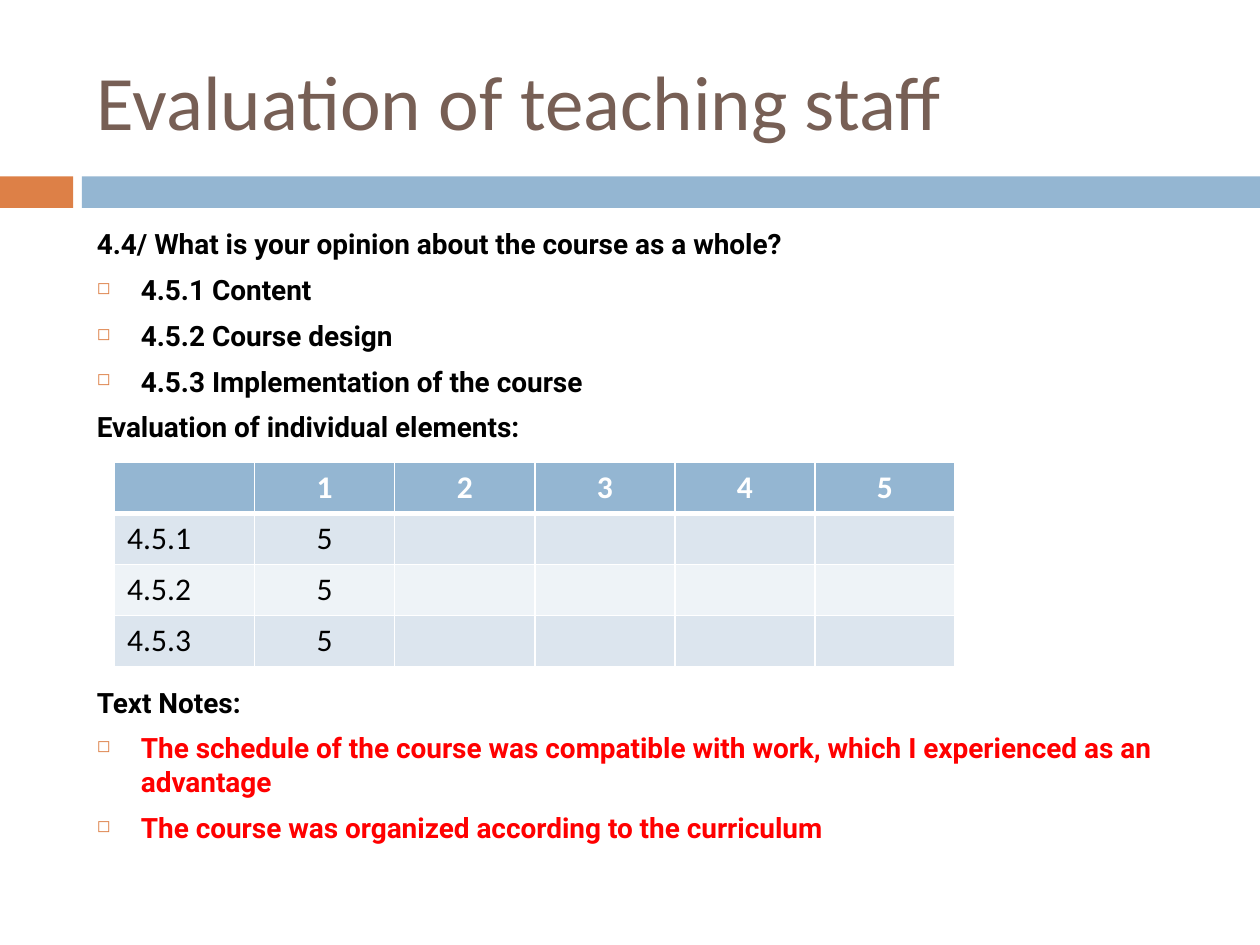
from lxml import etree
from pptx import Presentation
from pptx.dml.color import RGBColor
from pptx.enum.shapes import MSO_SHAPE
from pptx.enum.text import MSO_ANCHOR, PP_ALIGN
from pptx.oxml.ns import qn
from pptx.util import Inches, Pt

RECTANGLE = MSO_SHAPE.RECTANGLE
TOP, MIDDLE = MSO_ANCHOR.TOP, MSO_ANCHOR.MIDDLE
LEFT, CENTER = PP_ALIGN.LEFT, PP_ALIGN.CENTER

# Content
TITLE = "Evaluation of teaching staff"
# Each line: text, bulleted, colour name, space before in points
LINES = [
    ("4.4/ What is your opinion about the course as a whole?", False, "text", 0),
    ("4.5.1 Content", True, "text", 7),
    ("4.5.2 Course design", True, "text", 7),
    ("4.5.3 Implementation of the course", True, "text", 7),
    ("Evaluation of individual elements:", False, "text", 7),
    ("Text Notes:", False, "text", 138),  # leaves room for the ratings table
    ("The schedule of the course was compatible with work, "
     "which I experienced as an advantage", True, "note", 7),
    ("The course was organized according to the curriculum", True, "note", 7),
]
RATINGS = [
    ["", "1", "2", "3", "4", "5"],
    ["4.5.1", "5", "", "", "", ""],
    ["4.5.2", "5", "", "", "", ""],
    ["4.5.3", "5", "", "", "", ""],
]

THEME = {
    "title": "775F55", "text": "000000", "note": "FF0000", "white": "FFFFFF",
    "orange": "DD8047", "blue": "94B6D2", "bands": ["DCE5EE", "EEF3F7"],
    "heading_font": "Calibri", "body_font": "Roboto",
    "title_size": 44, "body_size": 16, "table_size": 18,
}

# Layout in inches: left, top, width, height
BARS = [("orange", 0, 1.4, 0.58, 0.25), ("blue", 0.65, 1.4, 9.35, 0.25)]
TITLE_AREA = (0.67, 0.25, 8.92, 1.08)
BODY_AREA = (0.67, 1.75, 9.13, 5.54)
TABLE_AREA = (0.91, 3.67, 6.67, 1.62)
INDENT = 0.35


def style(para, font, size, color, bold=False):
    for span in para.runs:
        span.font.name = font
        span.font.size = Pt(size)
        span.font.bold = bold
        span.font.color.rgb = RGBColor.from_string(color)


def add_box(page, area, anchor):
    frame = page.shapes.add_textbox(*map(Inches, area)).text_frame
    frame.word_wrap = True
    frame.vertical_anchor = anchor
    return frame


def add_bullet(properties):
    color = etree.SubElement(properties, qn("a:buClr"))
    etree.SubElement(color, qn("a:srgbClr"), val=THEME["orange"])
    etree.SubElement(properties, qn("a:buSzPct"), val="60000")
    etree.SubElement(properties, qn("a:buChar"), char="◻")


def set_borders(cell, bottom, top):
    properties = cell._tc.get_or_add_tcPr()
    widths = {"a:lnL": 1, "a:lnR": 1, "a:lnT": top, "a:lnB": bottom}
    for position, (side, width) in enumerate(widths.items()):
        line = etree.Element(qn(side), w=str(Pt(width)))
        fill = etree.SubElement(line, qn("a:solidFill"))
        etree.SubElement(fill, qn("a:srgbClr"), val=THEME["white"])
        properties.insert(position, line)


def add_bars(page):
    for color, *area in BARS:
        bar = page.shapes.add_shape(RECTANGLE, *map(Inches, area))
        bar.shadow.inherit = False
        bar.fill.solid()
        bar.fill.fore_color.rgb = RGBColor.from_string(THEME[color])
        bar.line.fill.background()


def add_title(page):
    para = add_box(page, TITLE_AREA, MIDDLE).paragraphs[0]
    para.text = TITLE
    style(para, THEME["heading_font"], THEME["title_size"], THEME["title"])


def add_body(page):
    frame = add_box(page, BODY_AREA, TOP)
    frame.text = "\n".join(line[0] for line in LINES)
    for para, (_, bulleted, color, gap) in zip(frame.paragraphs, LINES):
        para.space_before = Pt(gap)
        properties = para._p.get_or_add_pPr()
        properties.set("marL", str(Inches(INDENT)))
        properties.set("indent", str(-Inches(INDENT)))
        if bulleted:
            add_bullet(properties)
        style(para, THEME["body_font"], THEME["body_size"], THEME[color], True)


def add_ratings(page):
    left, top, width, height = map(Inches, TABLE_AREA)
    rows, columns = len(RATINGS), len(RATINGS[0])
    table = page.shapes.add_table(rows, columns, left, top, width, height).table
    for r, values in enumerate(RATINGS):
        header = r == 0
        fill = THEME["blue"] if header else THEME["bands"][(r - 1) % 2]
        color = THEME["white"] if header else THEME["text"]
        for c, value in enumerate(values):
            cell = table.cell(r, c)
            cell.text = value
            cell.fill.solid()
            cell.fill.fore_color.rgb = RGBColor.from_string(fill)
            set_borders(cell, bottom=3 if header else 1, top=3 if r == 1 else 1)
            para = cell.text_frame.paragraphs[0]
            para.alignment = LEFT if c == 0 else CENTER
            style(para, THEME["heading_font"], THEME["table_size"], color, header)


def main():
    deck = Presentation()
    deck.slide_width, deck.slide_height = Inches(10), Inches(7.5)
    page = deck.slides.add_slide(deck.slide_layouts[6])
    add_bars(page)
    add_title(page)
    add_body(page)
    add_ratings(page)
    deck.save("out.pptx")


if __name__ == "__main__":
    main()
